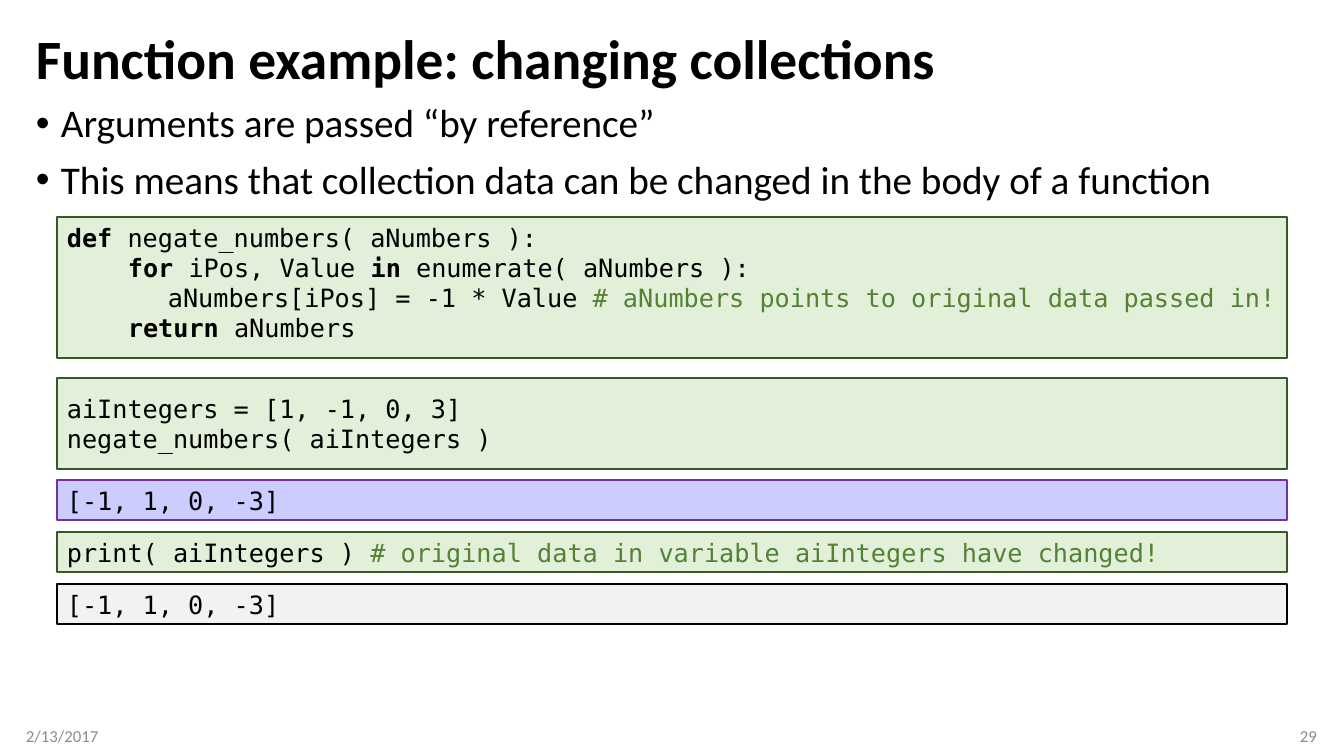
from lxml.etree import SubElement
from pptx import Presentation
from pptx.dml.color import RGBColor
from pptx.enum.shapes import MSO_SHAPE
from pptx.enum.text import MSO_ANCHOR, PP_ALIGN
from pptx.oxml.ns import qn
from pptx.util import Pt

PX = 914400 / 100.8

BLACK = RGBColor(0x00, 0x00, 0x00)
FOOTER_GREY = RGBColor(0x8C, 0x8C, 0x8C)
CODE_FILL = RGBColor(0xE2, 0xF0, 0xD9)
CODE_LINE = RGBColor(0x38, 0x57, 0x23)
COMMENT_GREEN = RGBColor(0x54, 0x82, 0x35)
RESULT_FILL = RGBColor(0xCC, 0xCC, 0xFF)
RESULT_LINE = RGBColor(0x70, 0x30, 0xA0)
OUTPUT_FILL = RGBColor(0xF2, 0xF2, 0xF2)

TEXT_FONT = "Calibri"
CODE_FONT = "DejaVu Sans Mono"
CODE_LEFT, CODE_WIDTH = 57, 1230
ROW_TOP, ROW_HEIGHT, ROW_PITCH = 480, 40, 52
BODY_INDENT, LOOP_INDENT = 61, 101


def emu(pixels):
    return round(pixels * PX)


def add_run(paragraph, text, size, font=TEXT_FONT, color=BLACK, bold=False):
    run = paragraph.add_run()
    run.text = text
    run.font.name = font
    run.font.size = Pt(size)
    run.font.color.rgb = color
    run.font.bold = bold


def next_paragraph(frame, index):
    return frame.paragraphs[0] if index == 0 else frame.add_paragraph()


def add_text_frame(slide, left, top, width, height, anchor):
    box = slide.shapes.add_textbox(emu(left), emu(top), emu(width), emu(height))
    frame = box.text_frame
    frame.word_wrap = True
    frame.vertical_anchor = anchor
    return frame


def add_title(slide, text):
    frame = add_text_frame(slide, 26, 25, 1291, 73, MSO_ANCHOR.MIDDLE)
    paragraph = frame.paragraphs[0]
    paragraph.line_spacing = 0.9
    add_run(paragraph, text, 39.6, bold=True)


def add_bullets(slide, texts):
    frame = add_text_frame(slide, 26, 99, 1291, 110, MSO_ANCHOR.TOP)
    for index, text in enumerate(texts):
        paragraph = next_paragraph(frame, index)
        paragraph.line_spacing = 0.9
        paragraph.space_before = Pt(10)
        properties = paragraph._p.get_or_add_pPr()
        properties.set("marL", str(emu(25)))
        properties.set("indent", str(emu(-25)))
        SubElement(properties, qn("a:buFont"), typeface="Arial")
        SubElement(properties, qn("a:buChar"), char="•")
        add_run(paragraph, text, 28)


def add_footer(slide, left, text, alignment):
    frame = add_text_frame(slide, left, 716, 302, 40, MSO_ANCHOR.MIDDLE)
    if alignment == PP_ALIGN.LEFT:
        frame.margin_left = 0
    else:
        frame.margin_right = 0
    frame.paragraphs[0].alignment = alignment
    add_run(frame.paragraphs[0], text, 12, color=FOOTER_GREY)


def add_code_box(slide, top, height, lines, fill=CODE_FILL, line=CODE_LINE,
                 anchor=MSO_ANCHOR.MIDDLE):
    """Draw a code box; each line is an indent in px and a list of (text, style)."""
    shape = slide.shapes.add_shape(MSO_SHAPE.RECTANGLE, emu(CODE_LEFT), emu(top),
                                   emu(CODE_WIDTH), emu(height))
    shape.shadow.inherit = False
    shape.fill.solid()
    shape.fill.fore_color.rgb = fill
    shape.line.color.rgb = line
    shape.line.width = Pt(1)
    frame = shape.text_frame
    frame.word_wrap = True
    frame.vertical_anchor = anchor
    for index, (indent, pieces) in enumerate(lines):
        paragraph = next_paragraph(frame, index)
        paragraph.alignment = PP_ALIGN.LEFT
        paragraph._p.get_or_add_pPr().set("marL", str(emu(indent)))
        for text, style in pieces:
            add_run(paragraph, text, 18, CODE_FONT, **style)


def main():
    presentation = Presentation()
    presentation.slide_width = emu(1344)
    presentation.slide_height = emu(756)
    slide = presentation.slides.add_slide(presentation.slide_layouts[6])

    plain, keyword, comment = {}, {"bold": True}, {"color": COMMENT_GREEN}
    function_lines = [
        (0, [("def ", keyword), ("negate_numbers( aNumbers ):", plain)]),
        (BODY_INDENT, [("for ", keyword), ("iPos, Value ", plain),
                       ("in", keyword), (" enumerate( aNumbers ):", plain)]),
        (LOOP_INDENT, [("aNumbers[iPos] = -1 * Value ", plain),
                       ("# aNumbers points to original data passed in!", comment)]),
        (BODY_INDENT, [("return ", keyword), ("aNumbers", plain)]),
    ]
    call_lines = [
        (0, [("aiIntegers = [1, -1, 0, 3]", plain)]),
        (0, [("negate_numbers( aiIntegers )", plain)]),
    ]
    negated = [("[-1, 1, 0, -3]", plain)]
    print_call = [("print( aiIntegers ) ", plain),
                  ("# original data in variable aiIntegers have changed!", comment)]
    rows = [
        (negated, RESULT_FILL, RESULT_LINE),
        (print_call, CODE_FILL, CODE_LINE),
        (negated, OUTPUT_FILL, BLACK),
    ]

    add_title(slide, "Function example: changing collections")
    add_bullets(slide, [
        "Arguments are passed “by reference”",
        "This means that collection data can be changed in the body of a function",
    ])
    add_code_box(slide, 217, 141, function_lines, anchor=MSO_ANCHOR.TOP)
    add_code_box(slide, 378, 91, call_lines)
    for index, (pieces, fill, line) in enumerate(rows):
        add_code_box(slide, ROW_TOP + index * ROW_PITCH, ROW_HEIGHT,
                     [(0, pieces)], fill, line)
    add_footer(slide, 26, "2/13/2017", PP_ALIGN.LEFT)
    add_footer(slide, 1015, "29", PP_ALIGN.RIGHT)

    presentation.save("out.pptx")


if __name__ == "__main__":
    main()
